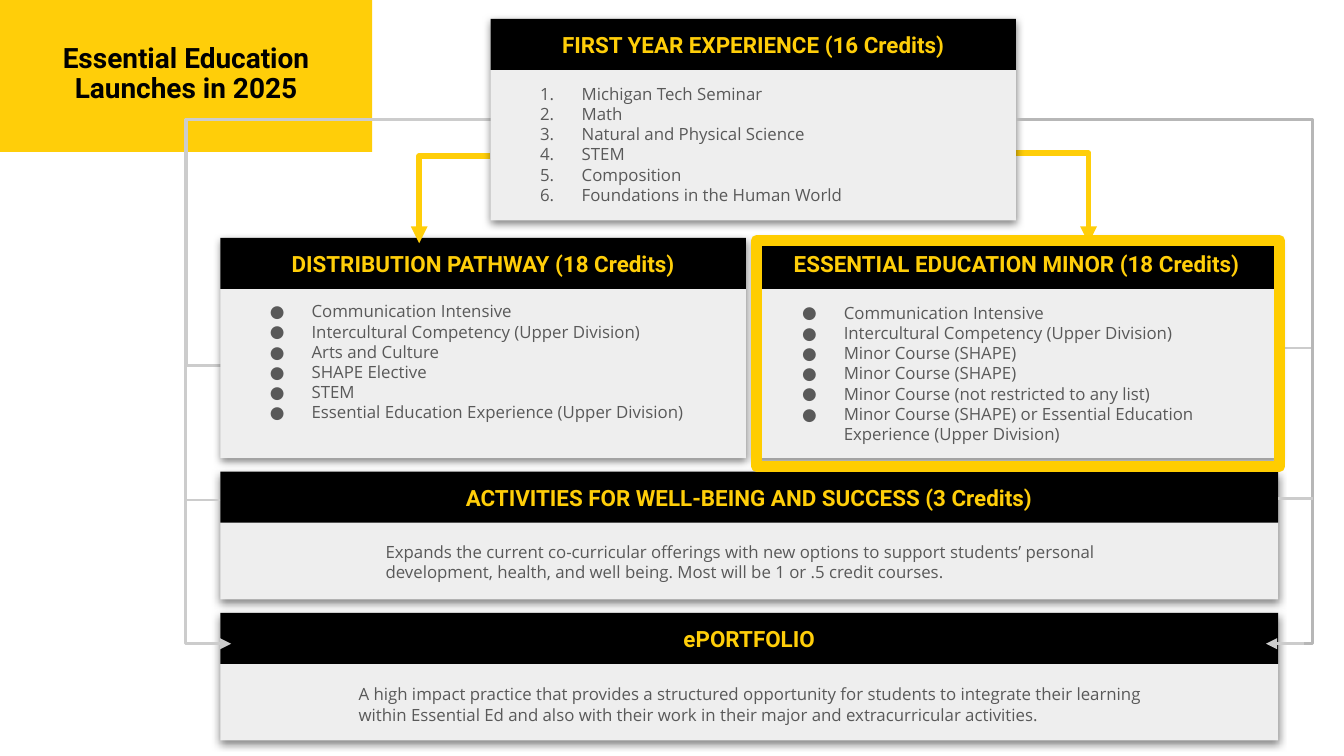
from pptx import Presentation
from pptx.util import Inches, Pt
from pptx.dml.color import RGBColor
from pptx.enum.shapes import MSO_CONNECTOR, MSO_SHAPE
from pptx.enum.text import PP_ALIGN
from pptx.oxml.ns import qn
from lxml import etree

RECT = MSO_SHAPE.RECTANGLE
ELBOW, LINE = MSO_CONNECTOR.ELBOW, MSO_CONNECTOR.STRAIGHT
LEFT, CENTER = PP_ALIGN.LEFT, PP_ALIGN.CENTER
HEX = {"gold": "FFCE09", "frame": "FFCD00", "black": "000000", "pale": "EEEEEE",
       "text": "595959", "grey": "CCCCCC", "dark": "B7B7B7"}
RGB = {name: RGBColor.from_string(code) for name, code in HEX.items()}

# Widescreen 16:9 slide
prs = Presentation()
prs.slide_width, prs.slide_height = Inches(10), Inches(10 * 9 / 16)
slide = prs.slides.add_slide(prs.slide_layouts[6])
shapes = slide.shapes


def add_text(text, box, size=9, font="Open Sans", color="text", bold=False,
             align=LEFT, space=None, bullet=None):
    frame = shapes.add_textbox(*[Inches(v) for v in box]).text_frame
    frame.word_wrap = True
    frame.margin_left = frame.margin_right = Inches(0.1)
    frame.margin_top = frame.margin_bottom = Inches(0.1)
    for i, line in enumerate(text.split("\n")):
        para = frame.paragraphs[0] if i == 0 else frame.add_paragraph()
        para.alignment = align
        if space:
            para.line_spacing = space
        if bullet:
            props = para._p.get_or_add_pPr()
            props.set("marL", str(Inches(0.5)))
            props.set("indent", str(Inches(-0.31)))
            tint = etree.SubElement(props, qn("a:buClr"))
            etree.SubElement(tint, qn("a:srgbClr"), val=HEX[color])
            etree.SubElement(props, qn("a:buSzPts"), val=str(size * 100))
            etree.SubElement(props, qn("a:buFont"), typeface=font)
            if bullet == "number":
                etree.SubElement(props, qn("a:buAutoNum"), type="arabicPeriod")
            else:
                etree.SubElement(props, qn("a:buChar"), char=bullet)
        run = para.add_run()
        run.text = line
        run.font.size, run.font.name, run.font.bold = Pt(size), font, bold
        run.font.color.rgb = RGB[color]


def add_link(start, end, color="grey", width=1.5, turn=None, corner=False, arrow=False):
    kind = ELBOW if turn or corner else LINE
    link = shapes.add_connector(kind, *[Inches(v) for v in (*start, *end)])
    link.line.color.rgb, link.line.width = RGB[color], Pt(width)
    props = link._element.spPr
    geom = props.find(qn("a:prstGeom"))
    if corner:
        geom.set("prst", "bentConnector2")
    if turn:
        share = round((turn - start[0]) / (end[0] - start[0]) * 100000)
        guides = geom.find(qn("a:avLst"))
        etree.SubElement(guides, qn("a:gd"), name="adj1", fmla=f"val {share}")
    if arrow:
        etree.SubElement(link.line._get_or_add_ln(), qn("a:tailEnd"), type="triangle")
    etree.SubElement(props, qn("a:effectLst"))


# Title block
block = shapes.add_shape(RECT, Inches(0), Inches(-0.02), Inches(2.77), Inches(1.15))
block.shadow.inherit = False
block.fill.solid()
block.fill.fore_color.rgb = RGB["gold"]
block.line.fill.background()

# Links that run behind the panels
add_link((7.56, 0.89), (9.51, 2.59), turn=9.77)
add_link((3.65, 0.89), (1.72, 2.72), turn=1.39)
add_text("Essential Education\nLaunches in 2025", (0, 0.23, 2.77, 0.66), size=15,
         font="Roboto", color="black", bold=True, align=CENTER, space=0.9)

# Panels: heading, box, body, body box, bullet
panels = [
    ("DISTRIBUTION PATHWAY (18 Credits)", (1.64, 1.77, 3.91, 1.64),
     "Communication Intensive\nIntercultural Competency (Upper Division)\n"
     "Arts and Culture\nSHAPE Elective\nSTEM\n"
     "Essential Education Experience (Upper Division)",
     (1.72, 2.14, 3.73, 1.15), "●"),
    ("ESSENTIAL EDUCATION MINOR (18 Credits)", (5.61, 1.77, 3.91, 1.64),
     "Communication Intensive\nIntercultural Competency (Upper Division)\n"
     "Minor Course (SHAPE)\nMinor Course (SHAPE)\n"
     "Minor Course (not restricted to any list)\n"
     "Minor Course (SHAPE) or Essential Education Experience (Upper Division)",
     (5.68, 2.15, 3.73, 1.15), "●"),
    ("ACTIVITIES FOR WELL-BEING AND SUCCESS (3 Credits)", (1.64, 3.51, 7.87, 0.95),
     "Expands the current co-curricular offerings with new options to support "
     "students’ personal development, health, and well being. Most will be 1 or "
     ".5 credit courses.", (2.77, 3.93, 5.61, 0.48), None),
    ("ePORTFOLIO", (1.64, 4.56, 7.87, 0.95),
     "A high impact practice that provides a structured opportunity for students to "
     "integrate their learning within Essential Ed and also with their work in their "
     "major and extracurricular activities.", (2.57, 4.99, 6.06, 0.48), None),
    ("FIRST YEAR EXPERIENCE (16 Credits)", (3.65, 0.14, 3.91, 1.5),
     "Michigan Tech Seminar\nMath\nNatural and Physical Science\nSTEM\nComposition\n"
     "Foundations in the Human World", (3.73, 0.52, 3.73, 1.15), "number"),
]
for head, (x, y, w, h), body, area, bullet in panels:
    if bullet == "number":
        # Links that start under the top panel
        add_link((3.65, 0.89), (1.64, 4.79), turn=1.38)
        add_link((3.65, 1.16), (3.12, 1.81), "gold", 3, corner=True, arrow=True)
        add_link((7.56, 1.14), (8.1, 1.81), "gold", 3, corner=True, arrow=True)
    for tall, color in ((h, "pale"), (0.38, "black")):
        card = shapes.add_shape(RECT, Inches(x), Inches(y), Inches(w), Inches(tall))
        card.shadow.inherit = False
        card.fill.solid()
        card.fill.fore_color.rgb = RGB[color]
        card.line.fill.background()
        if color == "pale":
            effects = card._element.spPr.find(qn("a:effectLst"))
            shade = etree.SubElement(effects, qn("a:outerShdw"), blurRad=str(Pt(4.5)),
                                     dist=str(Pt(1.5)), dir="5400000", algn="bl",
                                     rotWithShape="0")
            tint = etree.SubElement(shade, qn("a:srgbClr"), val=HEX["black"])
            etree.SubElement(tint, qn("a:alpha"), val="50000")
    add_text(head, (x, y - 0.01, w, 0.48), size=12, font="Roboto", color="gold",
             bold=True, align=CENTER)
    add_text(body, area, bullet=bullet)

# Links in front of the panels
add_link((9.51, 4.79), (7.56, 0.89), "dark", turn=9.77)
add_link((1.49, 4.79), (1.72, 4.79), arrow=True)
add_link((9.7, 4.79), (9.42, 4.79), arrow=True)
add_link((1.64, 3.72), (1.39, 3.72))
add_link((9.77, 3.71), (9.51, 3.71))

# Gold frame around the minor
frame = shapes.add_shape(RECT, Inches(5.63), Inches(1.79), Inches(3.89), Inches(1.68))
frame.shadow.inherit = False
frame.fill.background()
frame.line.color.rgb, frame.line.width = RGB["frame"], Pt(6)

prs.save("out.pptx")
